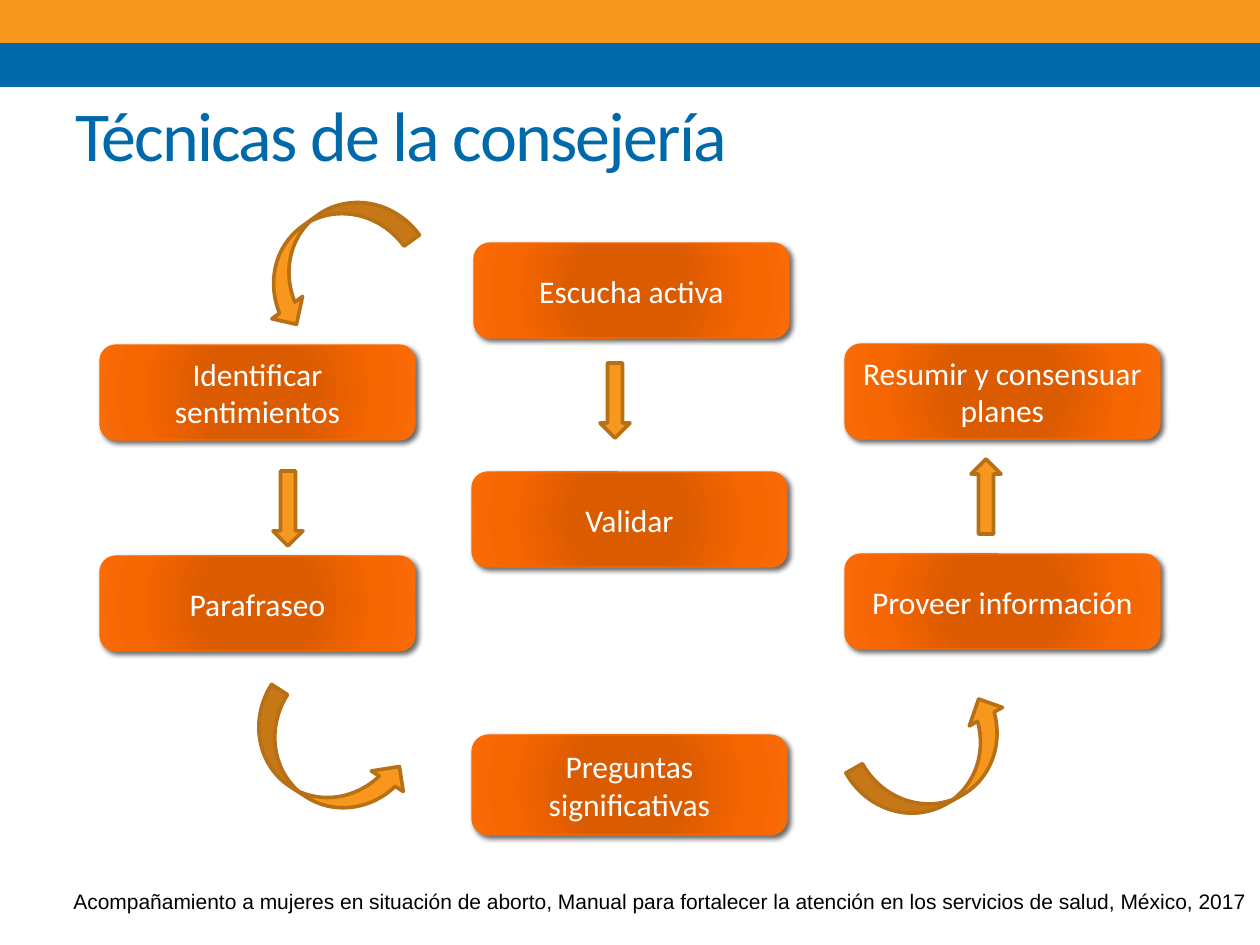
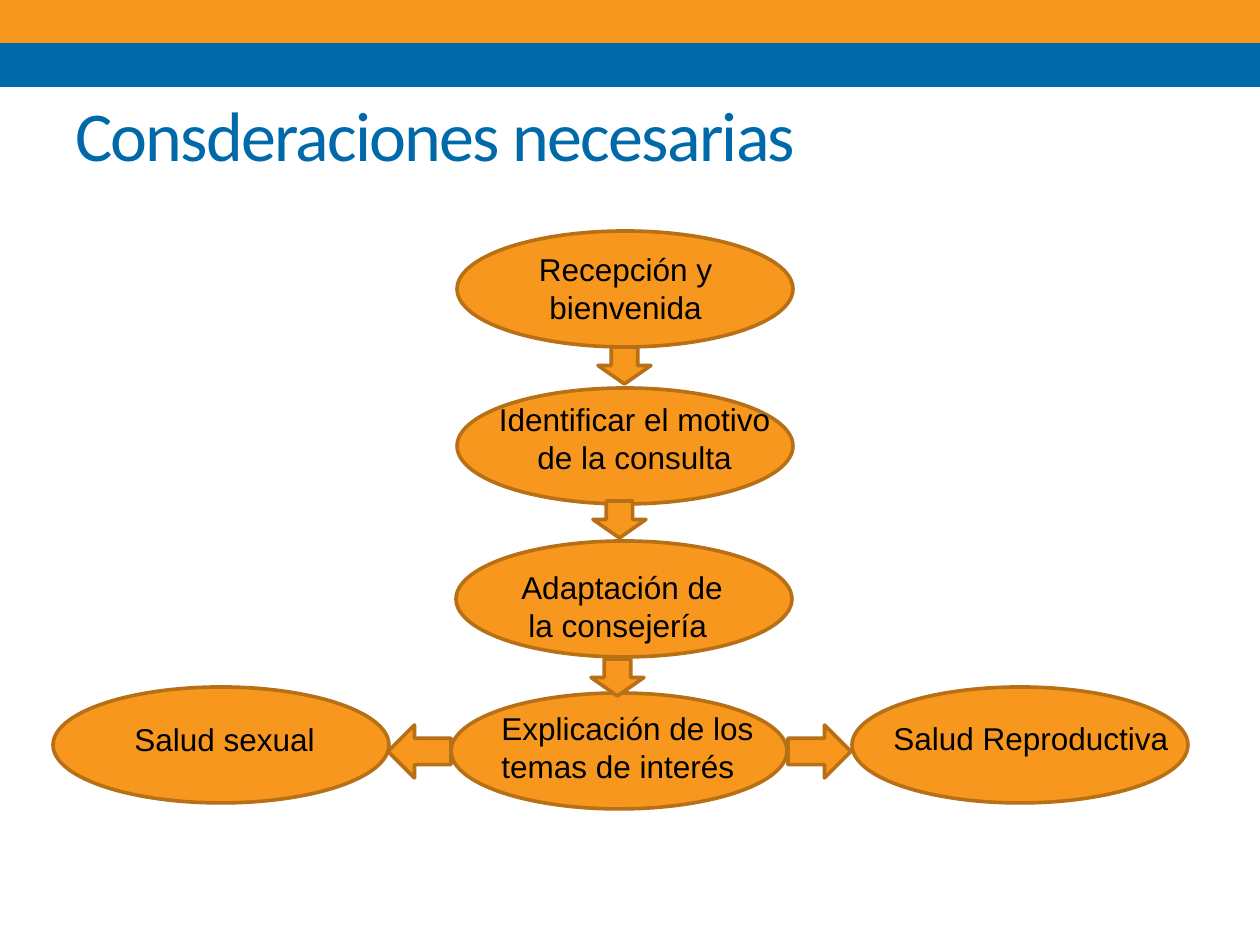
from lxml import etree
from pptx import Presentation
from pptx import util as u
from pptx.dml.color import RGBColor
from pptx.enum import shapes, text
from pptx.oxml import ns

PX = u.Inches(1) / 126
ORANGE, BROWN, BLUE = "F8971D", "B77015", "0069AA"
WHITE, BLACK, EMBER = "FFFFFF", "000000", "F96B07"
GLOW = [(0, "DB5B00"), (34, "DB5B00"), (70, "F56500"), (100, EMBER)]
KIND = shapes.MSO_SHAPE
LEFT, CENTER, RIGHT = text.PP_ALIGN.LEFT, text.PP_ALIGN.CENTER, text.PP_ALIGN.RIGHT
TOP, MIDDLE = text.MSO_ANCHOR.TOP, text.MSO_ANCHOR.MIDDLE


def px(*lengths):
    return [u.Emu(round(n * PX)) for n in lengths]


def rgb(color):
    return RGBColor.from_string(color)


def write(sp, words, size=18, font="Arial", color=BLACK, align=LEFT, anchor=TOP, spacing=None):
    tf = sp.text_frame
    tf.word_wrap = True
    tf.vertical_anchor = anchor
    p = tf.paragraphs[0]
    p.alignment = align
    r = p.add_run()
    r.text = words
    r.font.size = u.Pt(size)
    r.font.name = font
    r.font.color.rgb = rgb(color)
    if spacing is not None:
        r._r.get_or_add_rPr().set("spc", str(spacing))


def child(parent, tag, **attributes):
    return etree.SubElement(parent, ns.qn(tag), attributes)


def glow(sp):
    sp.fill.background()
    spPr = sp._element.spPr
    grad = etree.Element(ns.qn("a:gradFill"), rotWithShape="1")
    stops = child(grad, "a:gsLst")
    for pos, color in GLOW:
        child(child(stops, "a:gs", pos=str(pos * 1000)), "a:srgbClr", val=color)
    circle = child(grad, "a:path", path="circle")
    child(circle, "a:fillToRect", **dict.fromkeys("ltrb", "100000"))
    spPr.replace(spPr.find(ns.qn("a:noFill")), grad)


def cast_shadow(sp):
    effects = sp._element.spPr.find(ns.qn("a:effectLst"))
    shadow = child(effects, "a:outerShdw", blurRad=str(u.Pt(3)), dist=str(u.Pt(2)),
                   dir=str(45 * 60000), algn="tl", rotWithShape="0")
    child(child(shadow, "a:srgbClr", val=BLACK), "a:alpha", val="60000")


class Deck:
    def __init__(self):
        self.prs = Presentation()
        self.prs.slide_width, self.prs.slide_height = px(1260, 945)
        self.s = None

    def slide(self, title):
        self.s = self.prs.slides.add_slide(self.prs.slide_layouts[6])
        self.shape(KIND.RECTANGLE, 0, 0, 1260, 50, line=None)
        self.label(title, 63, 37, 1134, 193, size=40, font="Calibri", color=BLUE,
                   anchor=MIDDLE, spacing=-100)
        self.shape(KIND.RECTANGLE, 0, 45, 1260, 40, fill=BLUE, line=BLUE)

    def shape(self, kind, x, y, w, h, fill=ORANGE, line=BROWN, weight=2.08, turn=0):
        sp = self.s.shapes.add_shape(kind, *px(x, y, w, h))
        sp.rotation = turn
        sp.fill.solid()
        sp.fill.fore_color.rgb = rgb(fill)
        if line:
            sp.line.color.rgb = rgb(line)
            sp.line.width = u.Pt(weight)
        else:
            sp.line.fill.background()
        sp.shadow.inherit = False
        return sp

    def label(self, words, x, y, w, h, **style):
        write(self.s.shapes.add_textbox(*px(x, y, w, h)), words, **style)

    def technique(self, words, x, y, h=95):
        sp = self.shape(KIND.ROUNDED_RECTANGLE, x, y, 315, h, line=EMBER, weight=0.75)
        glow(sp)
        cast_shadow(sp)
        write(sp, words, font="Calibri", color=WHITE, align=CENTER, anchor=MIDDLE)

    def oval(self, x, y):
        self.shape(KIND.OVAL, x, y, 336, 116)


def techniques(deck):
    deck.slide("Técnicas de la consejería")
    left, middle, right = 100, 472, 845
    deck.technique("Escucha activa", middle + 2, 243)
    deck.technique("Preguntas significativas", middle, 735, h=100)
    deck.technique("Parafraseo", left, 556)
    deck.technique("Validar", middle, 472)
    deck.technique("Identificar sentimientos", left, 345)
    deck.technique("Proveer información", right, 554)
    deck.technique("Resumir y consensuar planes", right, 344)
    deck.label("Acompañamiento a mujeres en situación de aborto, Manual para fortalecer "
               "la atención en los servicios de salud, México, 2017",
               21, 882, 1239, 38, size=12, align=RIGHT)
    for x, y, turn in [(290, 169, 54), (901, 679, 240.9), (285, 677, 302.7)]:
        deck.shape(KIND.CURVED_RIGHT_ARROW, x, y, 76, 171, turn=turn)
    for x, y, turn in [(600, 363, 0), (273, 471, 0), (971, 459, 180)]:
        deck.shape(KIND.DOWN_ARROW, x, y, 30, 75, turn=turn)


def considerations(deck):
    deck.slide("Consderaciones necesarias")
    for x, y in [(457, 231), (457, 388), (456, 541), (451, 693), (53, 687), (852, 687)]:
        deck.oval(x, y)
    for words, x, y, w, h, align in [
        ("Recepción y bienvenida", 489, 244, 273, 89, CENTER),
        ("Identificar el motivo de la consulta", 480, 394, 309, 89, CENTER),
        ("Adaptación de la consejería ", 496, 562, 252, 89, CENTER),
        ("Explicación de los temas de interés", 489, 703, 309, 89, LEFT),
        ("Salud sexual", 122, 714, 256, 50, LEFT),
        ("Salud Reproductiva", 881, 713, 336, 50, LEFT),
    ]:
        deck.label(words, x, y, w, h, align=align)
    for x, y in [(598, 347), (593, 501), (591, 659)]:
        deck.shape(KIND.DOWN_ARROW, x, y, 53, 37)
    deck.shape(KIND.RIGHT_ARROW, 788, 725, 63, 53)
    deck.shape(KIND.LEFT_ARROW, 388, 725, 63, 53)


def main():
    deck = Deck()
    techniques(deck)
    considerations(deck)
    deck.prs.save("out.pptx")


if __name__ == "__main__":
    main()
